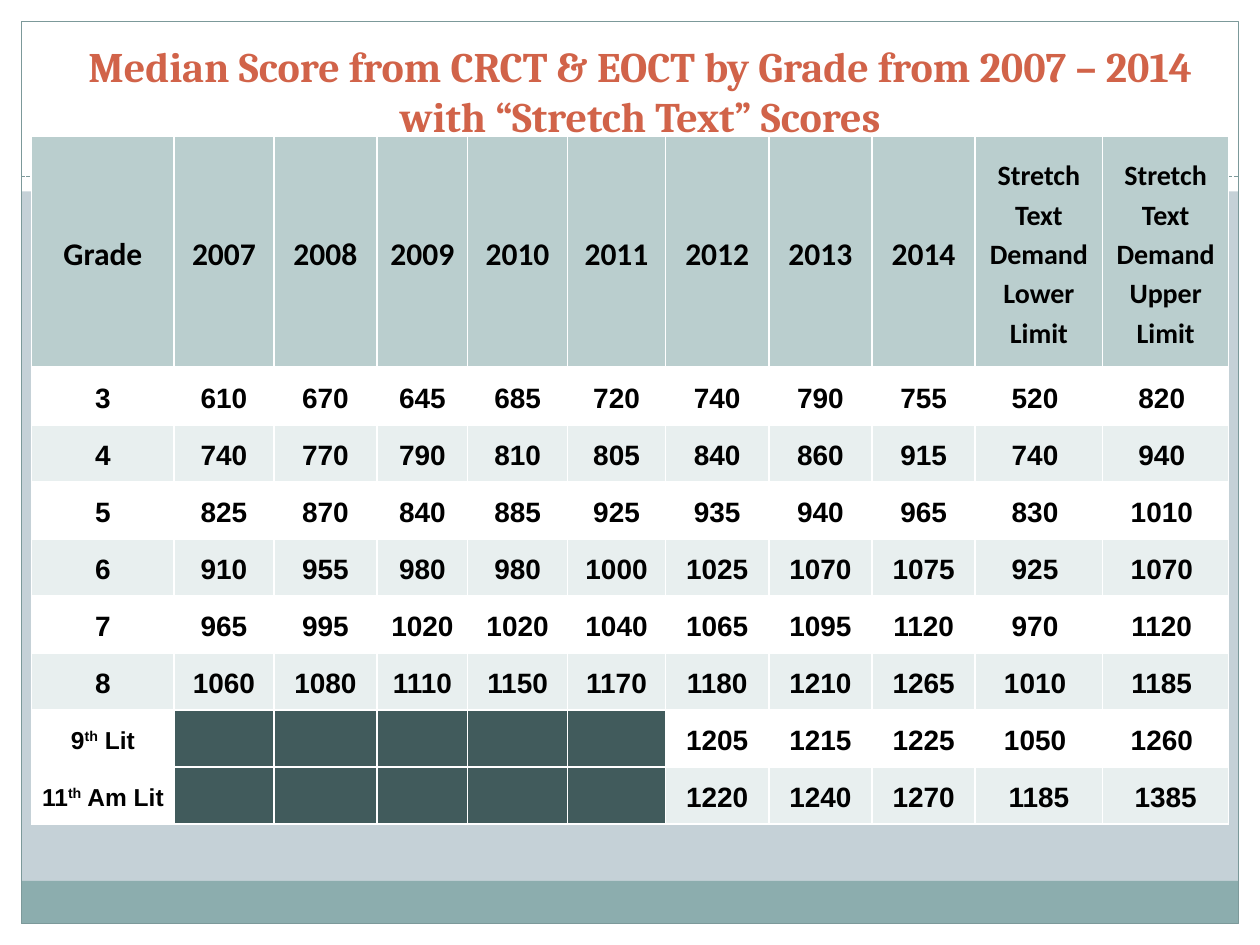
from lxml.etree import SubElement
from pptx import Presentation
from pptx.dml.color import RGBColor
from pptx.enum.dml import MSO_LINE
from pptx.enum.shapes import MSO_CONNECTOR, MSO_SHAPE
from pptx.enum.text import MSO_ANCHOR, MSO_AUTO_SIZE, PP_ALIGN
from pptx.oxml.ns import qn
from pptx.util import Cm, Pt

WIDTH, HEIGHT = 25.4, 19.05
WHITE, BLACK, TEAL, EDGE = "FFFFFF", "000000", "8CADAE", "7C999A"
HEADER_FILL, BAND_FILL, EMPTY_FILL = "BACECE", "E8EFEF", "415B5C"
TITLE = "Median Score from CRCT & EOCT by Grade from 2007 – 2014 with “Stretch Text” Scores"

HEADERS = ["Grade", *map(str, range(2007, 2015)),
           "Stretch Text Demand Lower Limit", "Stretch Text Demand Upper Limit"]
MEDIANS = [
    ("3", 610, 670, 645, 685, 720, 740, 790, 755, 520, 820),
    ("4", 740, 770, 790, 810, 805, 840, 860, 915, 740, 940),
    ("5", 825, 870, 840, 885, 925, 935, 940, 965, 830, 1010),
    ("6", 910, 955, 980, 980, 1000, 1025, 1070, 1075, 925, 1070),
    ("7", 965, 995, 1020, 1020, 1040, 1065, 1095, 1120, 970, 1120),
    ("8", 1060, 1080, 1110, 1150, 1170, 1180, 1210, 1265, 1010, 1185),
    ("9^th^ Lit", *[None] * 5, 1205, 1215, 1225, 1050, 1260),
    ("11^th^ Am Lit", *[None] * 5, 1220, 1240, 1270, 1185, 1385),
]
COLUMN_WIDTHS = [2.87, 2.01, 2.08, 1.83, 2.01, 1.98, 2.08, 2.08, 2.08, 2.57, 2.54]
HEADER_HEIGHT, ROW_HEIGHT = 4.67, 1.15


def color(value):
    return RGBColor.from_string(value)


def set_format(target, formats):
    for name, value in formats.items():
        setattr(target, name, value)


def set_font(font, name, size, value):
    set_format(font, {"name": name, "size": Pt(size), "bold": True})
    font.color.rgb = color(value)


def add_rectangle(slide, left, top, width, height, fill=None, line=None):
    shape = slide.shapes.add_shape(MSO_SHAPE.RECTANGLE, Cm(left), Cm(top), Cm(width), Cm(height))
    shape.shadow.inherit = False
    if fill:
        shape.fill.solid()
        shape.fill.fore_color.rgb = color(fill)
    else:
        shape.fill.background()
    if line:
        shape.line.color.rgb = color(line)
        shape.line.width = Pt(0.75)
    else:
        shape.line.fill.background()


def add_dashed_rule(slide, left, top, width):
    rule = slide.shapes.add_connector(
        MSO_CONNECTOR.STRAIGHT, Cm(left), Cm(top), Cm(left + width), Cm(top))
    rule.line.color.rgb = color(EDGE)
    set_format(rule.line, {"width": Pt(0.75), "dash_style": MSO_LINE.SQUARE_DOT})
    SubElement(rule.element.spPr, qn("a:effectLst"))


def add_frame(slide, left, top, width, height, margin=0.43, header=3.86, footer=0.86):
    right, bottom = left + width - margin, top + height - margin
    inner_width = width - 2 * margin
    for box in (
        (left, bottom, width, margin),
        (left, top, width, header),
        (left, top, margin, height),
        (right, top, margin, height),
    ):
        add_rectangle(slide, *box, fill=WHITE)
    add_rectangle(slide, left + margin, bottom - footer, inner_width, footer, fill=TEAL)
    add_rectangle(slide, left + margin, top + margin, inner_width, height - 2 * margin, line=EDGE)
    add_dashed_rule(slide, left + margin, top + header - 0.3, inner_width)


def place_title(slide, left, top, width, height):
    title = slide.shapes.title
    set_format(title, {"left": Cm(left), "top": Cm(top), "width": Cm(width), "height": Cm(height)})
    frame = title.text_frame
    set_format(frame, {"text": TITLE, "word_wrap": True, "auto_size": MSO_AUTO_SIZE.NONE,
                       "vertical_anchor": MSO_ANCHOR.BOTTOM})
    paragraph = frame.paragraphs[0]
    paragraph.alignment = PP_ALIGN.CENTER
    set_font(paragraph.runs[0].font, "Cambria", 24, "D16349")
    slide.shapes.element.append(title.element)


def add_borders(cell, bottom_width):
    properties = cell._tc.get_or_add_tcPr()
    for side, width in (("L", 1), ("R", 1), ("T", 1), ("B", bottom_width)):
        line = SubElement(properties, qn(f"a:ln{side}"), w=str(Pt(width)))
        fill = SubElement(line, qn("a:solidFill"))
        SubElement(fill, qn("a:srgbClr"), val=WHITE)


def fill_cell(cell, text, fill, font_name, size, bottom_width=1):
    add_borders(cell, bottom_width)
    cell.fill.solid()
    cell.fill.fore_color.rgb = color(fill)
    set_format(cell, {"margin_left": Cm(0.2), "margin_right": Cm(0.2), "margin_top": 0,
                      "margin_bottom": 0, "vertical_anchor": MSO_ANCHOR.MIDDLE})
    paragraph = cell.text_frame.paragraphs[0]
    set_format(paragraph, {"alignment": PP_ALIGN.CENTER, "line_spacing": 1.15})
    for index, part in enumerate(text.split("^") if text else []):
        run = paragraph.add_run()
        run.text = part
        set_font(run.font, font_name, size, BLACK)
        if index % 2:
            run.font._element.set("baseline", "30000")


def add_score_table(slide, left, top):
    height = HEADER_HEIGHT + ROW_HEIGHT * len(MEDIANS)
    table = slide.shapes.add_table(
        len(MEDIANS) + 1, len(HEADERS), Cm(left), Cm(top),
        Cm(sum(COLUMN_WIDTHS)), Cm(height)).table
    set_format(table, {"first_row": False, "horz_banding": False})
    for column, width in zip(table.columns, COLUMN_WIDTHS):
        column.width = Cm(width)
    for index, row in enumerate(table.rows):
        row.height = Cm(ROW_HEIGHT if index else HEADER_HEIGHT)
    for column, header in enumerate(HEADERS):
        size = 16 if header.startswith("Stretch") else 18
        fill_cell(table.cell(0, column), header, HEADER_FILL, "Calibri", size, bottom_width=3)
    for row, values in enumerate(MEDIANS, start=1):
        band = WHITE if row % 2 else BAND_FILL
        for column, value in enumerate(values):
            text = "" if value is None else str(value)
            is_course = "^" in text
            if column > 8 and row < len(MEDIANS):
                text += " "
            fill = EMPTY_FILL if value is None else WHITE if is_course else band
            fill_cell(table.cell(row, column), text, fill, "Arial", 14 if is_course else 16)


def main():
    presentation = Presentation()
    set_format(presentation, {"slide_width": Cm(WIDTH), "slide_height": Cm(HEIGHT)})
    slide = presentation.slides.add_slide(presentation.slide_layouts[5])
    slide.background.fill.solid()
    slide.background.fill.fore_color.rgb = color("C5D1D7")
    add_frame(slide, 0, 0, WIDTH, HEIGHT)
    place_title(slide, 0.84, 0, 24.13, 2.97)
    add_score_table(slide, 0.64, 2.75)
    presentation.save("out.pptx")


if __name__ == "__main__":
    main()
